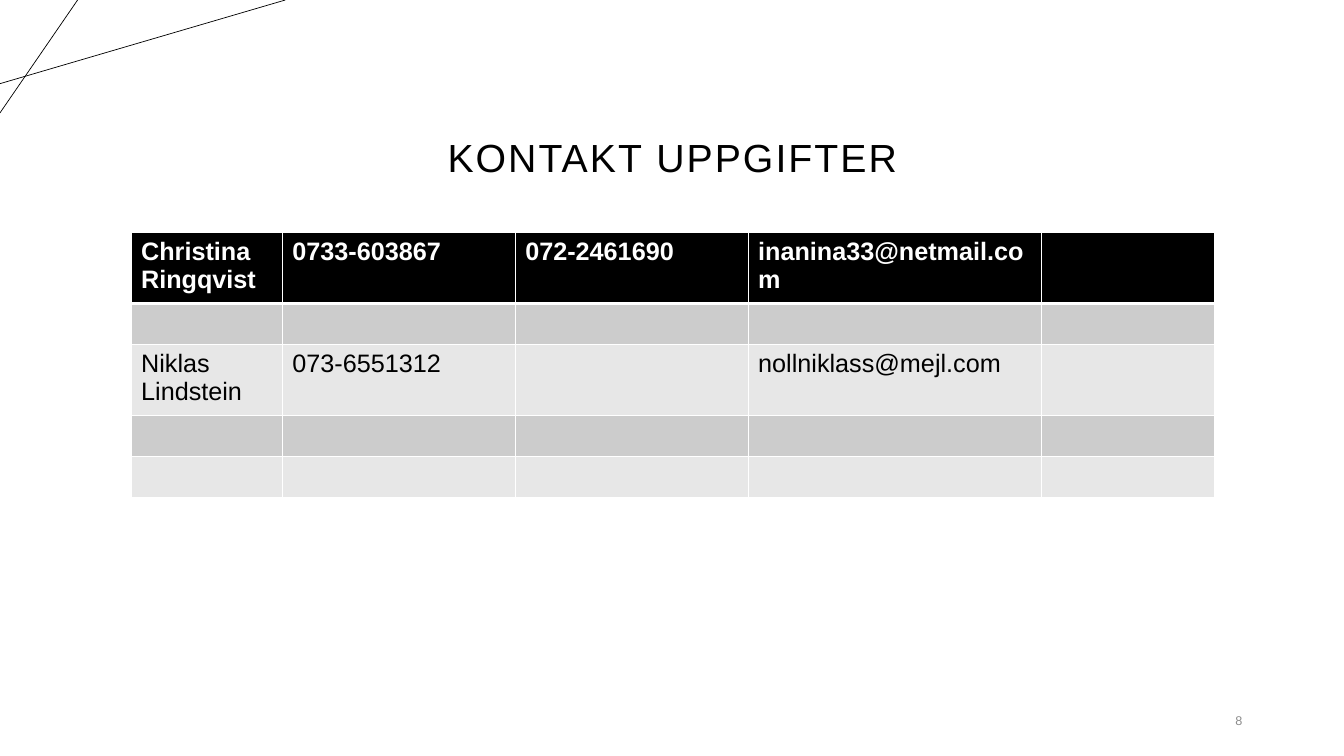
import pptx
import pptx.util
import pptx.dml.color
import pptx.enum.shapes
import pptx.enum.text
import pptx.oxml
import pptx.oxml.ns

Inches, Pt = pptx.util.Inches, pptx.util.Pt
RGBColor = pptx.dml.color.RGBColor
ALIGN = pptx.enum.text.PP_ALIGN
ANCHOR = pptx.enum.text.MSO_ANCHOR

BLACK = RGBColor(0x00, 0x00, 0x00)
WHITE = RGBColor(0xFF, 0xFF, 0xFF)
BAND_DARK = RGBColor(0xCC, 0xCC, 0xCC)
BAND_LIGHT = RGBColor(0xE7, 0xE7, 0xE7)
NUMBER_GRAY = RGBColor(0x8C, 0x8C, 0x8C)

COLUMN_WIDTHS = [1.5, 2.31, 2.31, 2.91, 1.72]
ROW_HEIGHT = 0.41
CONTACTS = [
    ["Christina Ringqvist", "0733-603867", "072-2461690", "inanina33@netmail.com", ""],
    [""] * 5,
    ["Niklas Lindstein", "073-6551312", "", "nollniklass@mejl.com", ""],
    [""] * 5,
    [""] * 5,
]


def write_text(tf, text, size=18, color=BLACK, bold=False, align=ALIGN.LEFT,
               line_spacing=None, letter_spacing=None):
    p = tf.paragraphs[0]
    p.alignment = align
    p.line_spacing = line_spacing
    r = p.add_run()
    r.text = text
    r.font.name = "Arial"
    r.font.size = Pt(size)
    r.font.bold = bold
    r.font.color.rgb = color
    if letter_spacing:
        r.font._element.set("spc", str(round(letter_spacing * 100)))


def add_text_box(s, box, text, anchor, **text_format):
    tf = s.shapes.add_textbox(*map(Inches, box)).text_frame
    tf.word_wrap = True
    tf.vertical_anchor = anchor
    write_text(tf, text, **text_format)


def add_corner_lines(s, box):
    x, y, w, h = box
    ends = [((x, y + 0.83), (x + w, y)), ((x + 0.77, y), (x, y + h))]
    for start, end in ends:
        line = s.shapes.add_connector(pptx.enum.shapes.MSO_CONNECTOR.STRAIGHT,
                                      *map(Inches, start + end))
        line.line.color.rgb = BLACK
        line.line.width = Pt(0.5)
        line._element.spPr.append(pptx.oxml.parse_xml(
            f"<a:effectLst {pptx.oxml.ns.nsdecls('a')}/>"))


def set_borders(cell, color, bottom):
    tc_pr = cell._tc.get_or_add_tcPr()
    widths = {"lnL": 1, "lnR": 1, "lnT": 1, "lnB": bottom}
    for i, (side, width) in enumerate(widths.items()):
        tc_pr.insert(i, pptx.oxml.parse_xml(
            f"<a:{side} {pptx.oxml.ns.nsdecls('a')} w=\"{Pt(width)}\">"
            f"<a:solidFill><a:srgbClr val=\"{color}\"/></a:solidFill></a:{side}>"))


def add_contact_table(s, box):
    frame = s.shapes.add_table(len(CONTACTS), len(COLUMN_WIDTHS), *map(Inches, box))
    table = frame.table
    for column, width in zip(table.columns, COLUMN_WIDTHS):
        column.width = Inches(width)
    for i, values in enumerate(CONTACTS):
        table.rows[i].height = Inches(ROW_HEIGHT)
        header = i == 0
        fill = BLACK if header else BAND_DARK if i % 2 else BAND_LIGHT
        for j, value in enumerate(values):
            cell = table.cell(i, j)
            cell.fill.solid()
            cell.fill.fore_color.rgb = fill
            set_borders(cell, WHITE, bottom=3 if header else 1)
            if value:
                write_text(cell.text_frame, value, bold=header,
                           color=WHITE if header else BLACK)


def build_contact_slide(prs):
    s = prs.slides.add_slide(prs.slide_layouts[6])
    s.background.fill.solid()
    s.background.fill.fore_color.rgb = WHITE
    # Corner decoration
    add_corner_lines(s, (0, 0, 2.83, 1.12))
    # Title
    add_text_box(s, (0.92, 0.39, 11.5, 1.45), "KONTAKT UPPGIFTER", ANCHOR.BOTTOM,
                 size=28, align=ALIGN.CENTER, line_spacing=0.9, letter_spacing=1.5)
    # Contact details
    add_contact_table(s, (1.3, 2.31, sum(COLUMN_WIDTHS), ROW_HEIGHT * len(CONTACTS)))
    # Slide number
    add_text_box(s, (11.34, 6.95, 1.08, 0.4), "8", ANCHOR.MIDDLE,
                 size=9, color=NUMBER_GRAY, align=ALIGN.RIGHT)


def main():
    prs = pptx.Presentation()
    prs.slide_width, prs.slide_height = Inches(13.33), Inches(7.5)
    build_contact_slide(prs)
    prs.save("out.pptx")


if __name__ == "__main__":
    main()
